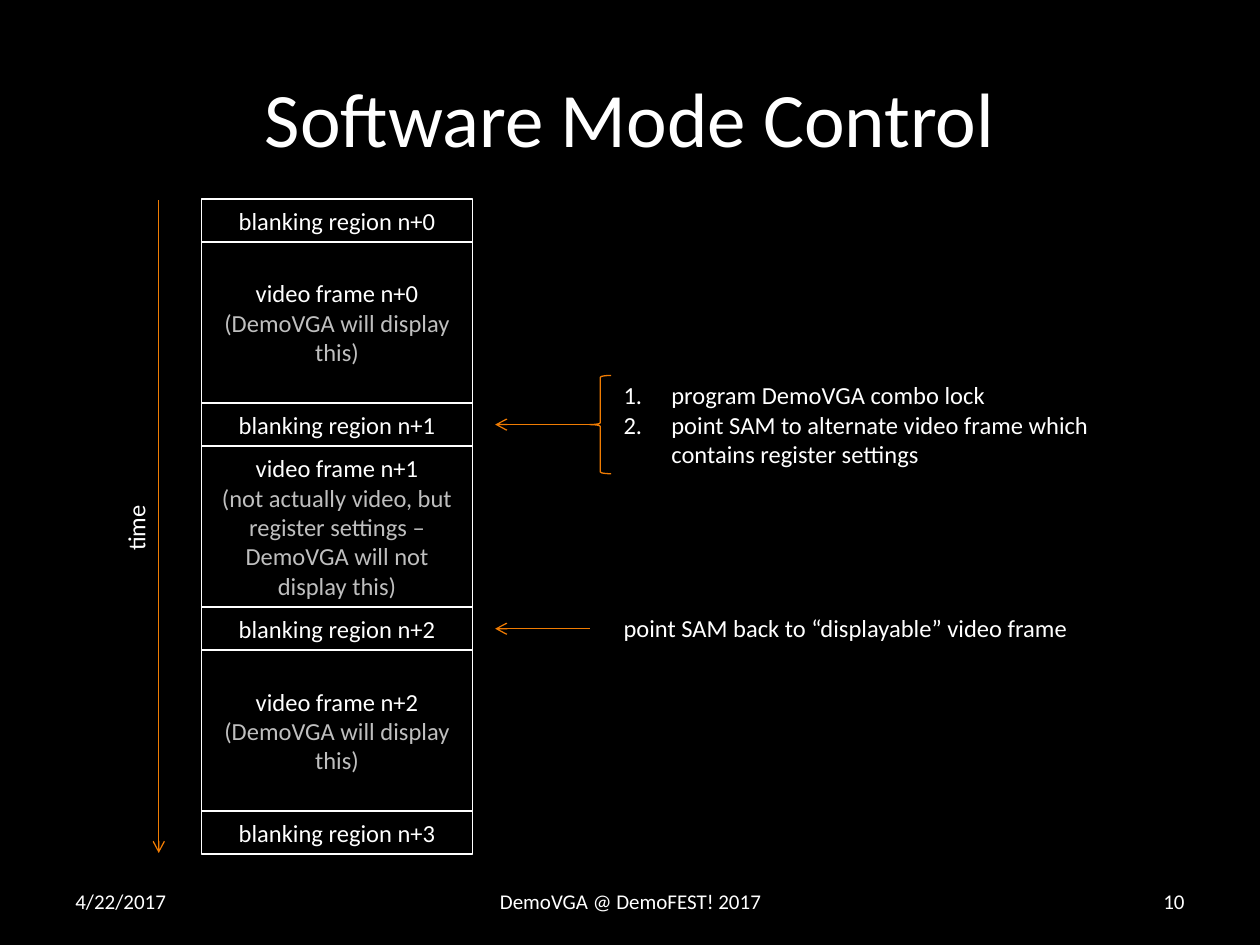
from lxml import etree
from pptx import Presentation
from pptx.dml.color import RGBColor
from pptx.enum import shapes, text
from pptx.oxml import ns
from pptx.util import Inches, Pt

BLACK = RGBColor(0x00, 0x00, 0x00)
WHITE = RGBColor(0xFF, 0xFF, 0xFF)
GREY = RGBColor(0xBF, 0xBF, 0xBF)
ORANGE = RGBColor(0xF0, 0x7C, 0x03)
FONT = "Calibri"
LEFT, CENTER, RIGHT = text.PP_ALIGN.LEFT, text.PP_ALIGN.CENTER, text.PP_ALIGN.RIGHT

# Timeline column: blanking regions alternate with video frames
COLUMN_LEFT, COLUMN_TOP, COLUMN_WIDTH = 1.6, 1.58, 2.15
BLANKING_HEIGHT, FRAME_HEIGHT = 0.34, 1.28
PERIOD = BLANKING_HEIGHT + FRAME_HEIGHT
DISPLAYED = ["(DemoVGA will display this)"]
FRAME_NOTES = [
    DISPLAYED,
    ["(not actually video, but", "register settings – DemoVGA will not display this)"],
    DISPLAYED,
]


def write(frame, lines, size=14, align=LEFT, anchor=text.MSO_ANCHOR.TOP):
    """Fill a text frame with one paragraph per (wording, colour) pair."""
    frame.word_wrap = True
    frame.vertical_anchor = anchor
    for index, (wording, color) in enumerate(lines):
        paragraph = frame.paragraphs[0] if index == 0 else frame.add_paragraph()
        paragraph.alignment = align
        run = paragraph.add_run()
        run.text = wording
        run.font.name = FONT
        run.font.size = Pt(size)
        run.font.color.rgb = color


def add_label(slide, box, wordings, **style):
    label = slide.shapes.add_textbox(*map(Inches, box))
    write(label.text_frame, [(wording, WHITE) for wording in wordings], **style)
    return label


def add_region(slide, top, height, lines):
    region = slide.shapes.add_shape(
        shapes.MSO_SHAPE.RECTANGLE, Inches(COLUMN_LEFT), Inches(top),
        Inches(COLUMN_WIDTH), Inches(height))
    region.shadow.inherit = False
    region.fill.background()
    region.line.color.rgb = WHITE
    region.line.width = Pt(1)
    write(region.text_frame, lines, align=CENTER, anchor=text.MSO_ANCHOR.MIDDLE)


def add_arrow(slide, start, end):
    arrow = slide.shapes.add_connector(
        shapes.MSO_CONNECTOR.STRAIGHT, *map(Inches, start + end))
    arrow.line.color.rgb = ORANGE
    arrow.line.width = Pt(0.75)
    etree.SubElement(arrow.line._get_or_add_ln(), ns.qn("a:tailEnd"), type="arrow")
    etree.SubElement(arrow._element.spPr, ns.qn("a:effectLst"))


def add_brace(slide, box):
    brace = slide.shapes.add_shape(shapes.MSO_SHAPE.LEFT_BRACE, *map(Inches, box))
    brace.shadow.inherit = False
    brace.fill.background()
    brace.line.color.rgb = ORANGE
    brace.line.width = Pt(0.75)


def number_steps(steps):
    for paragraph in steps.text_frame.paragraphs:
        properties = paragraph._p.get_or_add_pPr()
        properties.set("marL", str(Inches(0.38)))
        properties.set("indent", str(-Inches(0.38)))
        etree.SubElement(properties, ns.qn("a:buAutoNum"), type="arabicPeriod")


def add_title(slide, wording):
    title = slide.shapes.title
    title.left, title.top = Inches(0.5), Inches(0.3)
    title.width, title.height = Inches(9), Inches(1.25)
    write(title.text_frame, [(wording, WHITE)], size=44, align=CENTER,
          anchor=text.MSO_ANCHOR.MIDDLE)


def add_timeline(slide):
    for n in range(4):
        top = COLUMN_TOP + n * PERIOD
        add_region(slide, top, BLANKING_HEIGHT, [(f"blanking region n+{n}", WHITE)])
        if n < len(FRAME_NOTES):
            notes = [(note, GREY) for note in FRAME_NOTES[n]]
            add_region(slide, top + BLANKING_HEIGHT, FRAME_HEIGHT,
                       [(f"video frame n+{n}", WHITE)] + notes)

    # Time axis
    add_arrow(slide, (1.26, 1.59), (1.26, 6.77))
    time = add_label(slide, (0.79, 4.01, 0.58, 0.34), ["time"])
    time.rotation = 270


def add_actions(slide):
    # Arrows point at the middle of blanking regions n+1 and n+2
    for n in (1, 2):
        y = COLUMN_TOP + n * PERIOD + BLANKING_HEIGHT / 2
        add_arrow(slide, (4.68, y), (3.93, y))

    steps = add_label(slide, (4.85, 2.97, 4.25, 0.81), [
        "program DemoVGA combo lock",
        "point SAM to alternate video frame which contains register settings",
    ])
    number_steps(steps)
    add_brace(slide, (4.68, 2.98, 0.17, 0.78))
    add_label(slide, (4.85, 4.82, 4.25, 0.34),
              ["point SAM back to “displayable” video frame"])


def add_footer(slide):
    for left, width, wording, align in (
            (0.5, 2.33, "4/22/2017", LEFT),
            (3.42, 3.17, "DemoVGA @ DemoFEST! 2017", CENTER),
            (7.17, 2.33, "10", RIGHT)):
        add_label(slide, (left, 6.95, width, 0.4), [wording], size=12,
                  align=align, anchor=text.MSO_ANCHOR.MIDDLE)


def main():
    deck = Presentation()
    deck.slide_width, deck.slide_height = Inches(10), Inches(7.5)
    slide = deck.slides.add_slide(deck.slide_layouts[5])
    slide.background.fill.solid()
    slide.background.fill.fore_color.rgb = BLACK

    add_title(slide, "Software Mode Control")
    add_timeline(slide)
    add_actions(slide)
    add_footer(slide)
    deck.save("out.pptx")


if __name__ == "__main__":
    main()
